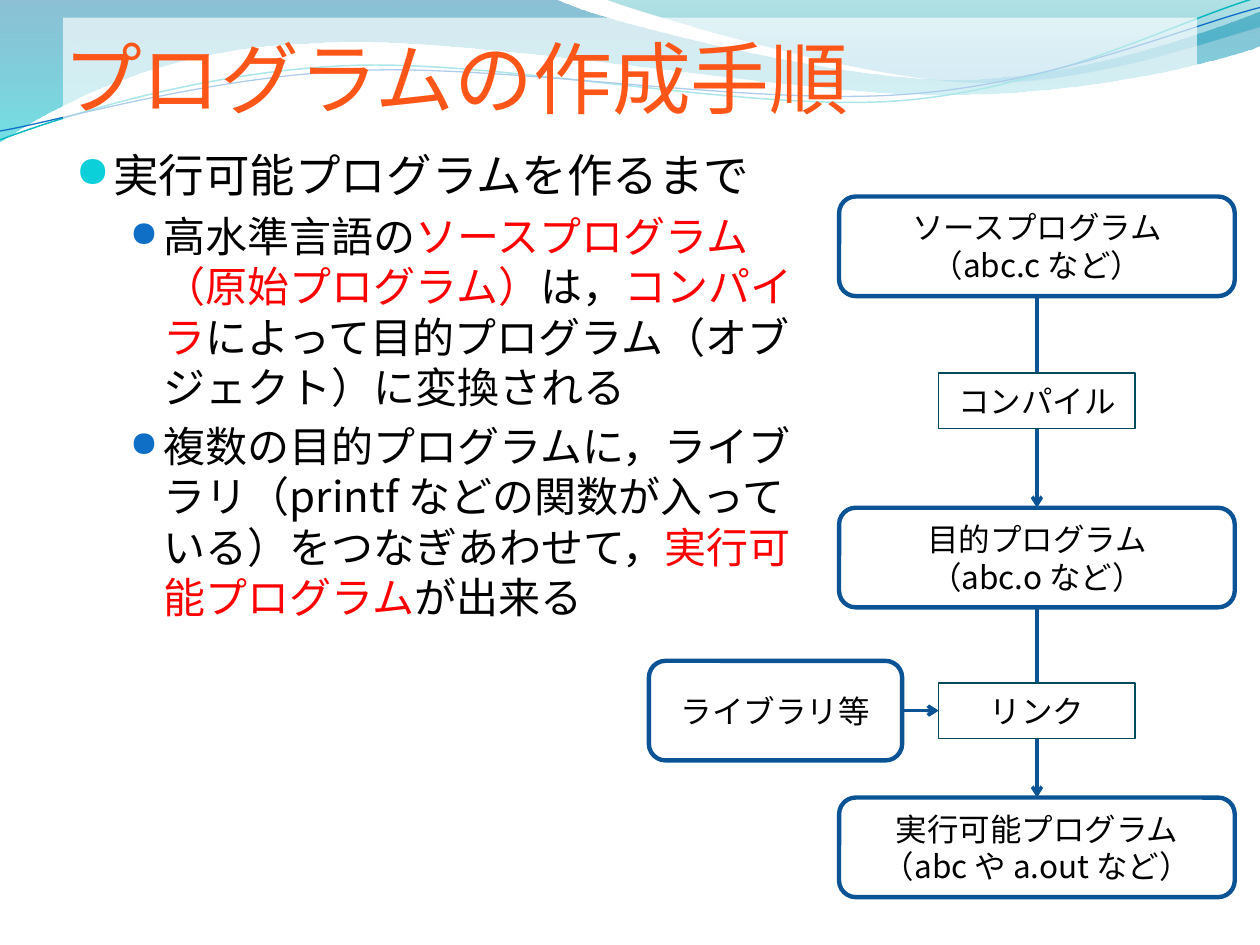
from dataclasses import dataclass
from math import cos, radians, sin
from typing import Optional

from lxml.etree import SubElement
from pptx import Presentation
from pptx.dml.color import RGBColor
from pptx.enum.shapes import MSO_CONNECTOR as Link, MSO_SHAPE as Preset
from pptx.enum.text import MSO_ANCHOR as Anchor, MSO_AUTO_SIZE as AutoSize, PP_ALIGN as Align
from pptx.oxml.ns import qn
from pptx.util import Inches, Pt

FONT = "Noto Sans CJK JP"
BULLET_FONT = "OpenSymbol"
BLACK = RGBColor(0x00, 0x00, 0x00)
WHITE = RGBColor(0xFF, 0xFF, 0xFF)
RED = RGBColor(0xFF, 0x00, 0x00)
ORANGE = RGBColor(0xFE, 0x56, 0x19)
BLUE = RGBColor(0x0F, 0x6F, 0xC6)
CYAN = RGBColor(0x0B, 0xD0, 0xD9)
TEAL = RGBColor(0x0A, 0xB8, 0xBF)
NAVY = RGBColor(0x0B, 0x53, 0x94)
ARROW_NAVY = RGBColor(0x0B, 0x53, 0x95)
DARK_TEAL = RGBColor(0x03, 0x49, 0x5C)

Point = tuple[float, float]


@dataclass
class Wave:
    """A path: two-value steps are lines, six-value steps are Bezier curves."""
    start: Point
    steps: list[tuple[float, ...]]
    stops: tuple = ()  # (position, colour, opacity)
    line: Optional[RGBColor] = None
    width: float = 0
    centre: Point = (0, 0)
    turn: float = 0


@dataclass
class Node:
    text: str
    left: float
    top: float
    width: float
    height: float
    preset: Preset
    line: RGBColor
    line_width: float


@dataclass
class Arrow:
    start: Point
    end: Point


@dataclass
class BulletStyle:
    size: int
    color: RGBColor
    percent: int
    margin: float
    indent: float


WAVES = [
    Wave((0, 0), [(4.4, -0.01), (4.76, 0.17, 6.64, 0.63, 7.58, 0.63),
                  (8.53, 0.63, 9.58, 0.26, 10, 0.09), (10.01, 0.36),
                  (9.83, 0.44, 8.7, 0.76, 7.46, 0.75), (6.22, 0.75, 3.82, 0.28, 2.57, 0.34),
                  (1.29, 0.36, 0.46, 0.83, -0.01, 1.13), (0, 0)],
         ((0, RGBColor(0x00, 0x74, 0xA1), 45), (1, RGBColor(0x00, 0xC6, 0xCF), 55))),
    Wave((4.79, -0.01), [(5.09, 0.11, 6.82, 0.62, 7.69, 0.65),
                         (8.56, 0.69, 9.61, 0.32, 10, 0.21), (10, 0), (4.79, -0.01)],
         ((0, RGBColor(0x00, 0xA1, 0xA9), 30), (0.8, RGBColor(0x00, 0x8B, 0xBF), 45))),
    Wave((0, 1.11), [(0.48, 0.93, 1.58, 0.57, 2.77, 0.52), (3.95, 0.47, 5.93, 0.89, 7.13, 0.8),
                     (8.33, 0.71, 9.38, 0.15, 9.98, -0.02)],
         line=TEAL, width=0.85, centre=(4.99, 0.58), turn=-2.7),
    Wave((0, 1.04), [(0.47, 0.96, 1.64, 0.61, 2.83, 0.56), (4.03, 0.51, 5.97, 0.84, 7.17, 0.75),
                     (8.36, 0.67, 9.41, 0.21, 10, 0.06)],
         line=BLUE, width=0.75, centre=(5, 0.59), turn=-2.7),
]

BULLET_STYLES = [BulletStyle(26, CYAN, 95, 0.3, -0.3), BulletStyle(24, BLUE, 85, 0.7, -0.27)]
BULLETS = [  # level, coloured runs
    (0, [("実行可能プログラムを作るまで", BLACK)]),
    (1, [("高水準言語の", BLACK), ("ソースプログラム（原始プログラム）", RED), ("は，", BLACK),
         ("コンパイラ", RED), ("によって目的プログラム（オブジェクト）に変換される", BLACK)]),
    (1, [("複数の目的プログラムに，ライブラリ（printf などの関数が入っている）をつなぎあわせて，", BLACK),
         ("実行可能プログラム", RED), ("が出来る", BLACK)]),
]

# Flow chart: one centred column, with the library box at its left
AXIS = 8.23
FILE_W, FILE_H = 3.14, 0.79
STEP_W, STEP_H = 1.56, 0.44
SOURCE_Y, OBJECT_Y, PROGRAM_Y = 1.56, 4.03, 6.33
COMPILE_Y, LINK_Y = 2.96, 5.42
LIBRARY_X, LIBRARY_W = 5.15, 2.01
LINK_MIDDLE = LINK_Y + STEP_H / 2


def file_box(text: str, top: float, left: float = AXIS - FILE_W / 2, width: float = FILE_W) -> Node:
    return Node(text, left, top, width, FILE_H, Preset.ROUNDED_RECTANGLE, NAVY, 2.5)


def step_box(text: str, top: float) -> Node:
    return Node(text, AXIS - STEP_W / 2, top, STEP_W, STEP_H, Preset.RECTANGLE, DARK_TEAL, 0.75)


FLOW = [
    file_box("ソースプログラム\n（abc.c など）", SOURCE_Y),
    Arrow((AXIS, SOURCE_Y + FILE_H), (AXIS, OBJECT_Y)),
    file_box("目的プログラム\n（abc.o など）", OBJECT_Y),
    file_box("実行可能プログラム（abc や a.out など）", PROGRAM_Y),
    file_box("ライブラリ等", LINK_MIDDLE - FILE_H / 2, LIBRARY_X, LIBRARY_W),
    step_box("コンパイル", COMPILE_Y),
    Arrow((AXIS, OBJECT_Y + FILE_H), (AXIS, PROGRAM_Y)),
    step_box("リンク", LINK_Y),
    Arrow((LIBRARY_X + LIBRARY_W, LINK_MIDDLE), (AXIS - STEP_W / 2, LINK_MIDDLE)),
]


def set_font(run, size: float, color: RGBColor) -> None:
    for name, value in {"name": FONT, "size": Pt(size), "bold": False}.items():
        setattr(run.font, name, value)
    run.font.color.rgb = color
    SubElement(run.font._element, qn("a:ea"), typeface=FONT)


def set_opacity(shape, percents: list[int]) -> None:
    for color, percent in zip(shape._element.spPr.iter(qn("a:srgbClr")), percents):
        SubElement(color, qn("a:alpha"), val=str(percent * 1000))


def place(shape, left: float, top: float, width: float, height: float) -> None:
    box = {"left": left, "top": top, "width": width, "height": height}
    for name, value in box.items():
        setattr(shape, name, Inches(value))


def level_point(wave: Wave, x: float, y: float) -> Point:
    """Turn a point back, so that the shape's rotation brings it into place."""
    angle = radians(-wave.turn)
    dx, dy = x - wave.centre[0], y - wave.centre[1]
    return (Inches(wave.centre[0] + dx * cos(angle) - dy * sin(angle)),
            Inches(wave.centre[1] + dx * sin(angle) + dy * cos(angle)))


def bend(shape, steps: list[tuple[float, ...]]) -> None:
    """Join the three segments of each curved step into one Bezier curve."""
    segments = iter(list(shape._element.spPr.iter(qn("a:lnTo"))))
    for step in steps:
        first, *others = [next(segments) for _ in range(len(step) // 2)]
        if others:
            curve = first.makeelement(qn("a:cubicBezTo"))
            first.addprevious(curve)
            for segment in (first, *others):
                curve.append(segment[0])
                segment.getparent().remove(segment)


def draw_wave(shapes, wave: Wave) -> None:
    pairs = [pair for step in wave.steps for pair in zip(step[::2], step[1::2])]
    builder = shapes.build_freeform(*level_point(wave, *wave.start))
    builder.add_line_segments([level_point(wave, *pair) for pair in pairs], close=bool(wave.stops))
    shape = builder.convert_to_shape()
    bend(shape, wave.steps)
    shape.rotation = wave.turn
    shape.shadow.inherit = False
    if not wave.stops:
        shape.fill.background()
        shape.line.color.rgb = wave.line
        shape.line.width = Pt(wave.width)
        return
    shape.line.fill.background()
    shape.fill.gradient()
    shape.fill.gradient_angle = 270
    for stop, (position, color, _) in zip(shape.fill.gradient_stops, wave.stops):
        stop.position = position
        stop.color.rgb = color
    set_opacity(shape, [opacity for _, _, opacity in wave.stops])


def write_title(title) -> None:
    place(title, 0.5, 0.14, 9, 0.85)
    title.fill.solid()
    title.fill.fore_color.rgb = WHITE
    set_opacity(title, [66])
    frame = title.text_frame
    frame.text = "プログラムの作成手順"
    layout = {"margin_left": 0, "margin_right": 0, "margin_bottom": 0,
              "vertical_anchor": Anchor.BOTTOM, "auto_size": AutoSize.NONE}
    for name, value in layout.items():
        setattr(frame, name, value)
    frame.paragraphs[0].alignment = Align.LEFT
    set_font(frame.paragraphs[0].runs[0], 45, ORANGE)


def write_bullets(body) -> None:
    place(body, 0.5, 1.12, 5.9, 6.21)
    frame = body.text_frame
    frame.auto_size = AutoSize.NONE
    for i, (level, runs) in enumerate(BULLETS):
        paragraph = frame.add_paragraph() if i else frame.paragraphs[0]
        paragraph.level = level
        style = BULLET_STYLES[level]
        props = paragraph._p.get_or_add_pPr()
        props.set("marL", str(Inches(style.margin)))
        props.set("indent", str(Inches(style.indent)))
        SubElement(SubElement(props, qn("a:buClr")), qn("a:srgbClr"), val=str(style.color))
        SubElement(props, qn("a:buSzPct"), val=str(style.percent * 1000))
        SubElement(props, qn("a:buFont"), typeface=BULLET_FONT)
        SubElement(props, qn("a:buChar"), char="●")
        for text, color in runs:
            run = paragraph.add_run()
            run.text = text
            set_font(run, style.size, color)


def draw_arrow(shapes, arrow: Arrow) -> None:
    line = shapes.add_connector(Link.STRAIGHT, *map(Inches, arrow.start + arrow.end))
    line.line.color.rgb = ARROW_NAVY
    line.line.width = Pt(2)
    SubElement(line.line._get_or_add_ln(), qn("a:tailEnd"), type="arrow")
    SubElement(line._element.spPr, qn("a:effectLst"))


def draw_node(shapes, node: Node) -> None:
    box = shapes.add_shape(node.preset, *map(Inches, (node.left, node.top, node.width, node.height)))
    box.shadow.inherit = False
    box.fill.solid()
    box.fill.fore_color.rgb = WHITE
    box.line.color.rgb = node.line
    box.line.width = Pt(node.line_width)
    box.text_frame.text = node.text
    box.text_frame.vertical_anchor = Anchor.MIDDLE
    for paragraph in box.text_frame.paragraphs:
        paragraph.alignment = Align.CENTER
        set_font(paragraph.runs[0], 18, BLACK)


def main() -> None:
    deck = Presentation()
    deck.slide_width, deck.slide_height = Inches(10), Inches(7.5)
    slide = deck.slides.add_slide(deck.slide_layouts[1])
    shapes = slide.shapes
    title, body = slide.placeholders

    # Waves go behind the title and the list
    for wave in WAVES:
        draw_wave(shapes, wave)
    for holder in (title, body):
        shapes._spTree.append(holder._element)
    write_title(title)
    write_bullets(body)

    # Flow chart
    for part in FLOW:
        draw = draw_arrow if isinstance(part, Arrow) else draw_node
        draw(shapes, part)
    deck.save("out.pptx")


if __name__ == "__main__":
    main()
